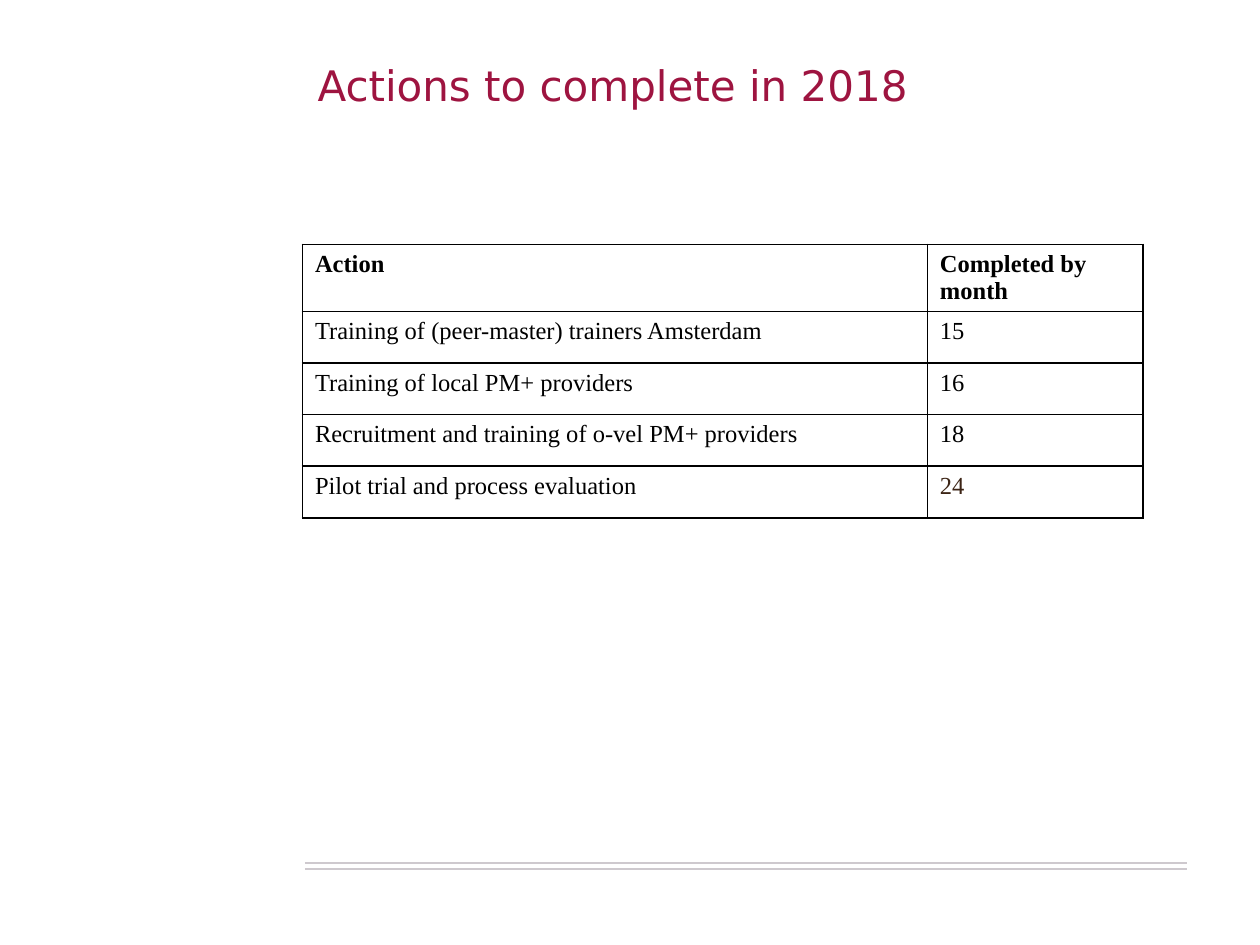
from dataclasses import dataclass

from lxml import etree
from pptx import Presentation
from pptx.dml.color import RGBColor
from pptx.enum.shapes import MSO_CONNECTOR
from pptx.enum.text import MSO_ANCHOR, PP_ALIGN
from pptx.oxml.ns import qn
from pptx.util import Inches, Pt

STRAIGHT = MSO_CONNECTOR.STRAIGHT
TOP = MSO_ANCHOR.TOP
LEFT = PP_ALIGN.LEFT


@dataclass(frozen=True)
class Theme:
    heading: RGBColor = RGBColor.from_string("9E1440")
    text: RGBColor = RGBColor.from_string("000000")
    last_month: RGBColor = RGBColor.from_string("3C2415")
    rule: RGBColor = RGBColor.from_string("CEC9CE")
    border: str = "000000"
    heading_font: str = "DejaVu Sans"
    table_font: str = "Times New Roman"
    heading_size: Pt = Pt(24)
    table_size: Pt = Pt(14)
    rule_width: Pt = Pt(1.25)
    border_width: Pt = Pt(1)


theme = Theme()


def add_borders(cell):
    properties = cell._tc.get_or_add_tcPr()
    for index, side in enumerate(("a:lnL", "a:lnR", "a:lnT", "a:lnB")):
        border = etree.Element(qn(side), w=str(theme.border_width))
        fill = etree.SubElement(border, qn("a:solidFill"))
        etree.SubElement(fill, qn("a:srgbClr"), val=theme.border)
        properties.insert(index, border)


prs = Presentation()
prs.slide_width, prs.slide_height = Inches(10), Inches(7.5)
slide = prs.slides.add_slide(prs.slide_layouts[5])

# Double rule at the foot
for y in (6.85, 6.9):
    rule = slide.shapes.add_connector(
        STRAIGHT, Inches(2.42), Inches(y), Inches(9.42), Inches(y))
    rule.line.color.rgb = theme.rule
    rule.line.width = theme.rule_width
    etree.SubElement(rule._element.spPr, qn("a:effectLst"))

# Title
title = slide.shapes.title
title.left, title.top = Inches(2.42), Inches(0.42)
title.width, title.height = Inches(7), Inches(1.08)
title.text_frame.text = "Actions to complete in 2018"
title.text_frame.vertical_anchor = TOP
heading = title.text_frame.paragraphs[0]
heading.alignment = LEFT
heading.font.name = theme.heading_font
heading.font.size = theme.heading_size
heading.font.color.rgb = theme.heading

# Table of actions
actions = [
    ("Action", "Completed by month"),
    ("Training of (peer-master) trainers Amsterdam", "15"),
    ("Training of local PM+ providers", "16"),
    ("Recruitment and training of o-vel PM+ providers", "18"),
    ("Pilot trial and process evaluation", "24"),
]
column_widths = (4.96, 1.71)
row_height = 0.41
schedule = slide.shapes.add_table(
    len(actions), len(column_widths), Inches(2.4), Inches(1.94),
    Inches(sum(column_widths)), Inches(row_height * len(actions))).table
schedule.horz_banding = False
for column, width in zip(schedule.columns, column_widths):
    column.width = Inches(width)

for row, entries in enumerate(actions):
    schedule.rows[row].height = Inches(row_height)
    for col, entry in enumerate(entries):
        cell = schedule.cell(row, col)
        cell.text = entry
        cell.fill.background()
        add_borders(cell)
        font = cell.text_frame.paragraphs[0].font
        font.name = theme.table_font
        font.size = theme.table_size
        font.bold = row == 0
        font.color.rgb = theme.last_month if entry == "24" else theme.text

prs.save("out.pptx")
